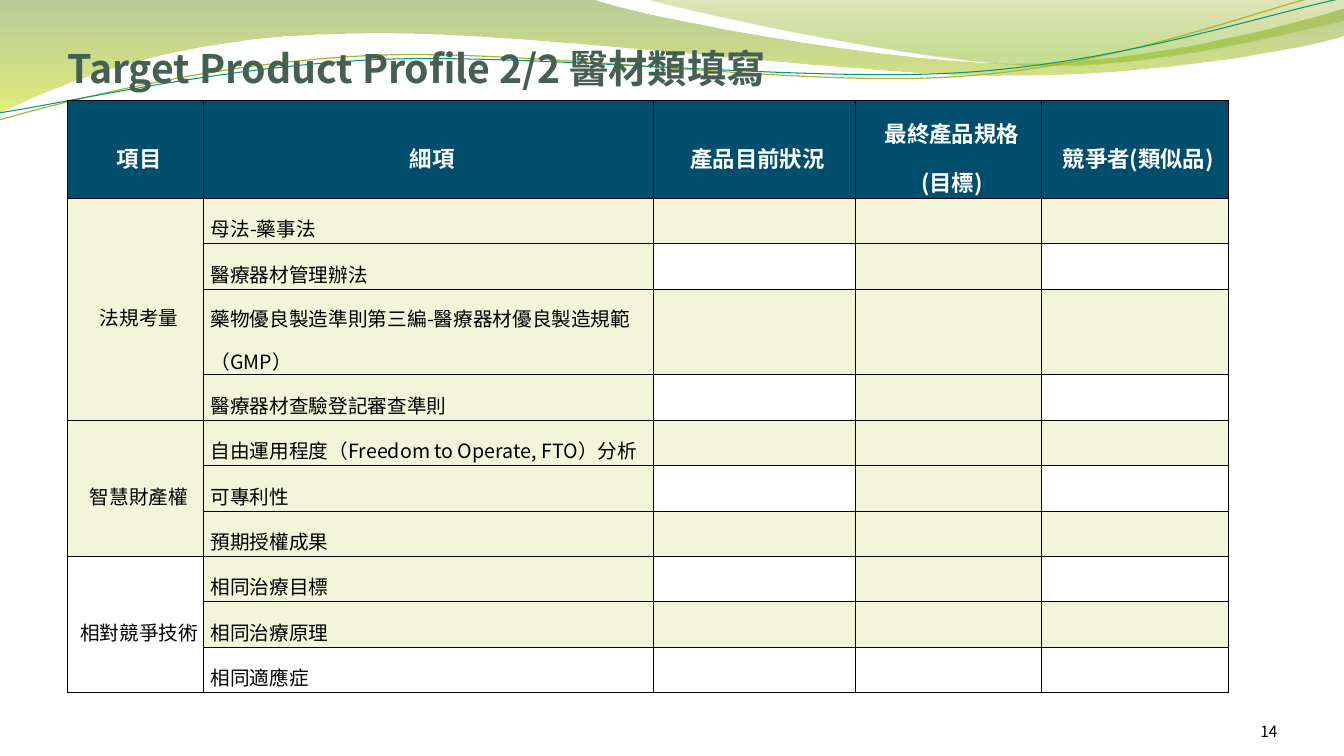
import pptx
import pptx.util
import pptx.dml.color
import pptx.enum.text
import pptx.oxml
import pptx.oxml.ns

Inches, Pt = pptx.util.Inches, pptx.util.Pt
RGB = pptx.dml.color.RGBColor
ALIGN, ANCHOR = pptx.enum.text.PP_ALIGN, pptx.enum.text.MSO_ANCHOR
qn = pptx.oxml.ns.qn

BLACK, WHITE = RGB(0, 0, 0), RGB(255, 255, 255)
NAVY = RGB(0x00, 0x4E, 0x6E)
LIME = RGB(0xC0, 0xCF, 0x3A)
PINE = RGB(0x45, 0x5F, 0x51)
OLIVE, TEAL = RGB(0xA8, 0xB5, 0x32), RGB(0x02, 0x96, 0x76)
MOSS, ACID = RGB(0x66, 0x8F, 0x1B), RGB(0xCA, 0xE0, 0x0E)
KHAKI, GRASS = RGB(0x99, 0xA7, 0x19), RGB(0x80, 0xB8, 0x14)
SANS = "Noto Sans CJK SC"


def style(par, size, color, bold=False, face=SANS):
    for run in par.runs:
        run.font.size, run.font.bold, run.font.name = Pt(size), bold, face
        run.font.color.rgb = color
        east = run.font._element.makeelement(qn("a:ea"), {"typeface": face})
        run.font._element.find(qn("a:latin")).addnext(east)


def fade(node, *rates):
    for color, rate in zip(node.iter(qn("a:srgbClr")), rates):
        color.append(color.makeelement(qn("a:alpha"), {"val": str(rate * 1000)}))


prs = pptx.Presentation()
prs.slide_width, prs.slide_height = Inches(13.33), Inches(7.5)
slide = prs.slides.add_slide(prs.slide_layouts[5])
shapes = slide.shapes

# Waves: start, then straight (2 numbers) or curved (6 numbers) steps
band = [(0, 0), (5.87, -0.01), (6.34, 0.17, 8.84, 0.63, 10.11, 0.63),
        (11.37, 0.63, 12.77, 0.26, 13.33, 0.09), (13.34, 0.36),
        (13.11, 0.44, 11.59, 0.76, 9.94, 0.75), (8.29, 0.75, 5.09, 0.28, 3.43, 0.34),
        (1.72, 0.36, 0.61, 0.83, -0.02, 1.13), (0, 0)]
crest = [(6.38, -0.01), (6.79, 0.11, 9.09, 0.62, 10.25, 0.65),
         (11.4, 0.69, 12.82, 0.32, 13.33, 0.21), (13.33, 0), (6.38, -0.01)]
upper = [(-0.01, 1.19), (0.63, 1.01, 2.1, 0.62, 3.69, 0.55),
         (5.27, 0.48, 7.89, 0.87, 9.49, 0.76), (11.1, 0.66, 12.51, 0.08, 13.3, -0.1)]
lower = [(-0.01, 1.12), (0.62, 1.03, 2.18, 0.66, 3.77, 0.59),
         (5.37, 0.53, 7.96, 0.82, 9.55, 0.72), (11.14, 0.62, 12.55, 0.14, 13.33, -0.02)]
waves = [(band, [(MOSS, 0, 45), (ACID, 1, 55)], None),
         (crest, [(KHAKI, 0, 30), (GRASS, 0.8, 45)], None),
         (upper, None, (OLIVE, 0.85)), (lower, None, (TEAL, 0.75))]
for steps, stops, line in waves:
    pen = shapes.build_freeform(Inches(steps[0][0]), Inches(steps[0][1]))
    pen.add_line_segments([(Inches(step[-2]), Inches(step[-1])) for step in steps[1:]],
                          close=bool(stops))
    wave = pen.convert_to_shape()
    wave.shadow.inherit = False
    # Bend the curved steps
    for step, node in zip(steps[1:], list(wave._element.iter(qn("a:lnTo")))):
        if len(step) == 6:
            node.tag = qn("a:cubicBezTo")
            for n in (0, 2):
                spot = {"x": str(Inches(step[n]) - wave.left),
                        "y": str(Inches(step[n + 1]) - wave.top)}
                node.insert(n // 2, node.makeelement(qn("a:pt"), spot))
    if stops:
        wave.fill.gradient()
        wave.fill.gradient_angle = 270
        for stop, (color, place, _) in zip(wave.fill.gradient_stops, stops):
            stop.color.rgb, stop.position = color, place
        fade(wave._element.spPr, *[rate for _, _, rate in stops])
        wave.line.fill.background()
    else:
        wave.fill.background()
        wave.line.color.rgb, wave.line.width = line[0], Pt(line[1])

# Page number
box = shapes.add_textbox(Inches(11.56), Inches(6.95), Inches(1.11), Inches(0.4))
frame = box.text_frame
frame.word_wrap = True
frame.margin_left = frame.margin_right = frame.margin_top = frame.margin_bottom = 0
frame.vertical_anchor = ANCHOR.BOTTOM
frame.text = "14"
frame.paragraphs[0].alignment = ALIGN.RIGHT
style(frame.paragraphs[0], 11, BLACK, face="Noto Sans CJK TC")

# Table content
heads = ["項目", "細項", "產品目前狀況", "最終產品規格\n(目標)", "競爭者(類似品)"]
groups = [
    ("法規考量", ["母法-藥事法", "醫療器材管理辦法",
              "藥物優良製造準則第三編-醫療器材優良製造規範 （GMP）", "醫療器材查驗登記審查準則"]),
    ("智慧財產權", ["自由運用程度（Freedom to Operate, FTO）分析", "可專利性", "預期授權成果"]),
    ("相對競爭技術", ["相同治療目標", "相同治療原理", "相同適應症"]),
]
rows = [heads]
for name, items in groups:
    for n, item in enumerate(items):
        rows.append([name if n == 0 else "", item, "", "", ""])

# Table grid
table = shapes.add_table(len(rows), 5, Inches(0.67), Inches(1),
                         Inches(11.51), Inches(5.88)).table
table.first_row = table.horz_banding = False
for col, width in zip(table.columns, [1.35, 4.46, 2, 1.85, 1.85]):
    col.width = Inches(width)
for r, row in enumerate(table.rows):
    row.height = Inches({0: 0.97, 3: 0.85}.get(r, 0.45))
top = 1
for name, items in groups:
    end = top + len(items) - 1
    table.cell(top, 0).merge(table.cell(end, 0))
    top = end + 1

# Cells: even rows are shaded only in the detail and target columns
for r, texts in enumerate(rows):
    for c, text in enumerate(texts):
        cell = table.cell(r, c)
        cell.margin_left = cell.margin_right = cell.margin_top = cell.margin_bottom = 0
        cell.vertical_anchor = ANCHOR.MIDDLE
        cell.text_frame.text = text
        for par in cell.text_frame.paragraphs:
            par.line_spacing = 1.5 if text else 1
            par.alignment = ALIGN.CENTER if r == 0 or c == 0 else ALIGN.LEFT
            par._p.get_or_add_pPr().set("marL", str(Inches(0.07)))
            style(par, 14 if r else 16, BLACK if r else WHITE, r == 0)
        shaded = r < 8 if c == 0 else r < 10 and (r % 2 == 1 or c in (1, 3))
        if r == 0 or shaded:
            cell.fill.solid()
            cell.fill.fore_color.rgb = LIME if r else NAVY
            fade(cell._tc.tcPr, 20 if r else 100)
        else:
            cell.fill.background()
        for n, side in enumerate("LRTB"):
            cell._tc.tcPr.insert(n, pptx.oxml.parse_xml(
                f'<a:ln{side} {pptx.oxml.ns.nsdecls("a")} w="{Pt(0.75)}">'
                f'<a:solidFill><a:srgbClr val="{BLACK}"/></a:solidFill></a:ln{side}>'))
target = table.cell(0, 3)
target.vertical_anchor = ANCHOR.TOP
target.margin_left = target.margin_right = Inches(0.05)

# Title, in front of the waves
title = shapes.title
title.left, title.top = Inches(0.67), Inches(0.36)
title.width, title.height = Inches(12), Inches(0.58)
frame = title.text_frame
frame.margin_left = frame.margin_right = frame.margin_bottom = 0
frame.margin_top = Inches(0.05)
frame.vertical_anchor = ANCHOR.MIDDLE
frame.text = "Target Product Profile 2/2 醫材類填寫"
frame.paragraphs[0].alignment = ALIGN.LEFT
style(frame.paragraphs[0], 28, PINE, True)
shapes._spTree.append(title._element)

prs.save("out.pptx")
